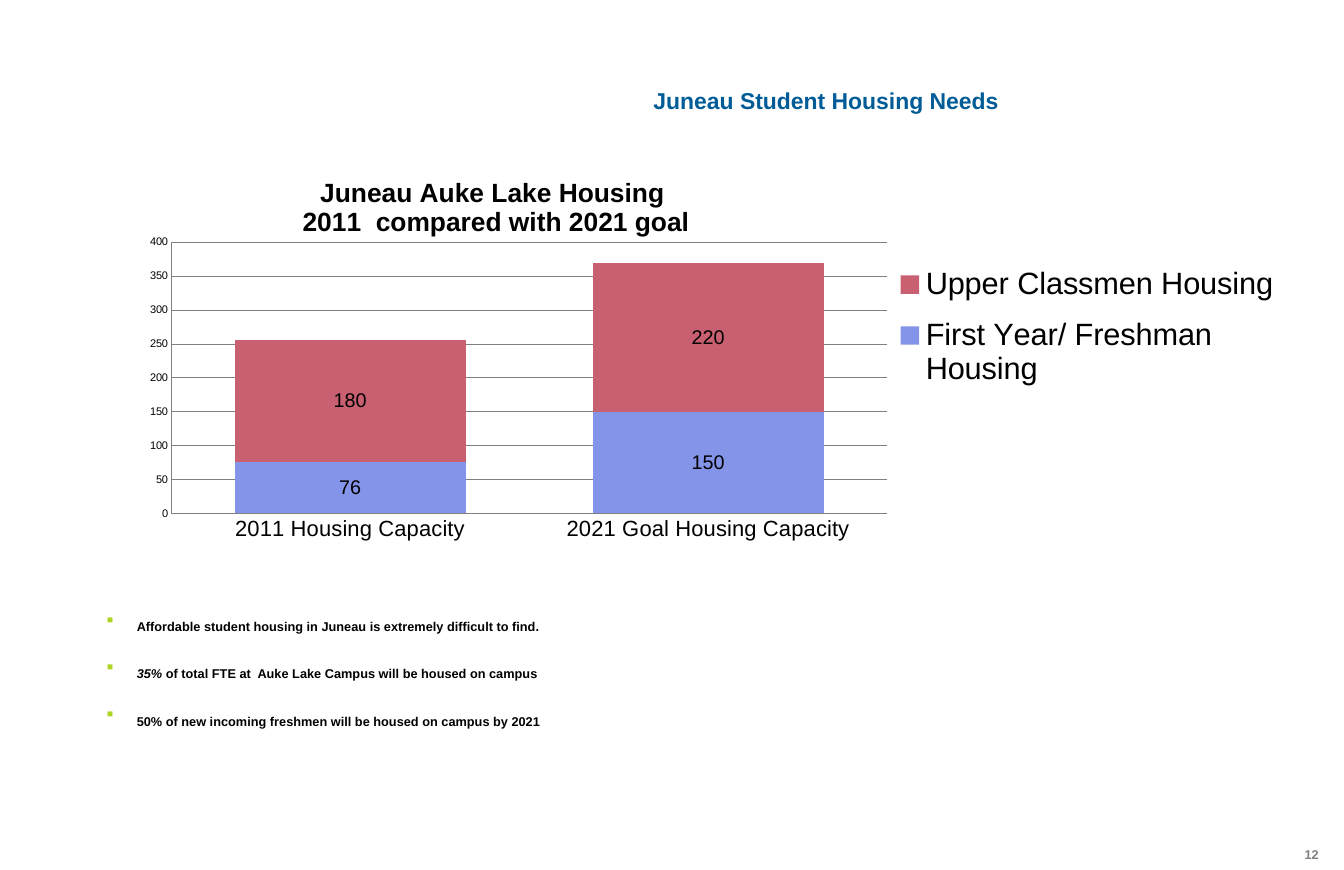
from pptx import Presentation
from pptx import util as u
from pptx.chart import data as cd
from pptx.dml.color import RGBColor
from pptx.enum import chart as ce, text as te
from pptx.oxml import parse_xml
from pptx.oxml.ns import nsdecls, qn

NAVY = RGBColor(0x00, 0x5C, 0x97)
BLACK = RGBColor(0, 0, 0)
GRAY = RGBColor(0x80, 0x80, 0x80)
BLUE = RGBColor(0x83, 0x94, 0xE9)
ROSE = RGBColor(0xC8, 0x60, 0x71)
LIME = RGBColor(0xAD, 0xD4, 0x25)
FONT = "Arial"

CATS = ["2011 Housing Capacity", "2021 Goal Housing Capacity"]
SERIES = [
    ("First Year/ Freshman Housing", (76, 150), BLUE),
    ("Upper Classmen Housing", (180, 220), ROSE),
]
POINTS = [
    [("Affordable student housing in Juneau is extremely difficult to find.", False)],
    [("35% ", True),
     ("of total FTE at  Auke Lake Campus will be housed on campus", False)],
    [("50% of new incoming freshmen will be housed on campus by 2021", False)],
]


def style(font, size, color=BLACK, bold=False, italic=False):
    font.name, font.size = FONT, u.Pt(size)
    font.bold, font.italic = bold, italic
    font.color.rgb = color


def write(para, words, sub=True, align=None, **fmt):
    """Add one run; sub sets it as lowered small text."""
    run = para.add_run()
    run.text = words
    style(run.font, **fmt)
    if sub:
        run._r.get_or_add_rPr().set("baseline", "-25000")
    if align is not None:
        para.alignment = align


def fit(shape, box):
    """Move a text shape to its box and return its emptied frame."""
    shape.left, shape.top, shape.width, shape.height = box
    frame = shape.text_frame
    frame.word_wrap = True
    frame.auto_size = te.MSO_AUTO_SIZE.NONE
    frame.vertical_anchor = te.MSO_ANCHOR.TOP
    return frame


def bullet(para):
    props = para._p.get_or_add_pPr()
    props.set("lvl", "1")
    props.set("marL", str(u.Cm(1.57)))
    props.set("indent", str(u.Cm(-0.97)))
    stops = "".join(f'<a:tab pos="{u.Cm(x)}" algn="l"/>' for x in (1.57, 2.06, 2.54))
    for xml in (
        f'<a:buClr {nsdecls("a")}><a:srgbClr val="{LIME}"/></a:buClr>',
        f'<a:buSzPct {nsdecls("a")} val="90000"/>',
        f'<a:buFont {nsdecls("a")} typeface="{FONT}"/>',
        f'<a:buChar {nsdecls("a")} char="▪"/>',
        f'<a:tabLst {nsdecls("a")}>{stops}</a:tabLst>',
    ):
        props.append(parse_xml(xml))


def place(part, x, y, w=None, h=None, inner=False):
    """Give a chart part a manual layout in shares of the chart."""
    old = part.find(qn("c:layout"))
    if old is not None:
        part.remove(old)
    tags = '<c:layoutTarget val="inner"/>' if inner else ""
    tags += '<c:xMode val="edge"/><c:yMode val="edge"/>'
    for key, val in zip("xywh", (x, y, w, h)):
        if val is not None:
            tags += f'<c:{key} val="{val}"/>'
    new = parse_xml(f'<c:layout {nsdecls("c")}><c:manualLayout>{tags}'
                    '</c:manualLayout></c:layout>')
    over = part.find(qn("c:overlay"))
    if over is None:
        part.insert(0, new)
    else:
        over.addprevious(new)


def add_title(slide, box):
    frame = fit(slide.shapes.title, box)
    write(frame.paragraphs[0], "Juneau Student Housing Needs", size=36,
          color=NAVY, bold=True, align=te.PP_ALIGN.RIGHT)


def add_points(slide, box):
    frame = fit(slide.placeholders[1], box)
    for i, parts in enumerate(POINTS):
        para = frame.add_paragraph() if i else frame.paragraphs[0]
        bullet(para)
        para.line_spacing = 1.5
        para.space_before = u.Pt(1 if i else 0)
        para.space_after = u.Pt(1)
        for words, slant in parts:
            write(para, words, size=20, bold=True, italic=slant)


def add_number(slide, box):
    frame = fit(slide.shapes.add_textbox(*box), box)
    write(frame.paragraphs[0], "12", size=20, color=GRAY, bold=True,
          align=te.PP_ALIGN.RIGHT)


def add_bars(slide, box):
    data = cd.CategoryChartData()
    data.categories = CATS
    for name, vals, _ in SERIES:
        data.add_series(name, vals)
    chart = slide.shapes.add_chart(ce.XL_CHART_TYPE.COLUMN_STACKED, *box, data).chart
    style(chart.font, 10)

    # Chart title
    frame = chart.chart_title.text_frame
    write(frame.paragraphs[0], "Juneau Auke Lake Housing ", sub=False, size=24, bold=True)
    write(frame.add_paragraph(), "2011  compared with 2021 goal", sub=False,
          size=24, bold=True)
    place(chart.chart_title._element, 0.16, 0.02)

    # Bars and their labels
    plot = chart.plots[0]
    plot.gap_width, plot.overlap = 55, 100
    plot.vary_by_categories = False
    for bar, (_, _, color) in zip(plot.series, SERIES):
        bar.format.fill.solid()
        bar.format.fill.fore_color.rgb = color
        bar.format.line.fill.background()
        bar.data_labels.show_value = True
        bar.data_labels.position = ce.XL_LABEL_POSITION.CENTER
        style(bar.data_labels.font, 18)
    place(chart._chartSpace.chart.plotArea, 0.05, 0.18, 0.61, 0.64, inner=True)

    # Axes
    cat, val = chart.category_axis, chart.value_axis
    val.minimum_scale, val.maximum_scale, val.major_unit = 0, 400, 50
    val.has_major_gridlines = True
    for axis, size in ((cat, 20), (val, 10)):
        axis.major_tick_mark = axis.minor_tick_mark = ce.XL_TICK_MARK.NONE
        style(axis.tick_labels.font, size)
    for item in (cat, val, val.major_gridlines):
        item.format.line.color.rgb = GRAY
        item.format.line.width = u.Pt(0.75)

    # Legend
    chart.has_legend = True
    key = chart.legend
    key.position = ce.XL_LEGEND_POSITION.RIGHT
    key.include_in_layout = False
    style(key.font, 28)
    place(key._element, 0.66, 0.2, 0.34, 0.36)


def area(*sides):
    return [u.Cm(s) for s in sides]


def main():
    deck = Presentation()
    deck.slide_width, deck.slide_height = u.Cm(43.18), u.Cm(27.94)
    slide = deck.slides.add_slide(deck.slide_layouts[1])
    add_number(slide, area(41.2, 26.59, 1.42, 0.84))
    add_title(slide, area(10.34, 1.8, 22, 1.8))
    add_points(slide, area(2.57, 18.8, 27.18, 5.23))
    add_bars(slide, area(3.61, 5.33, 37.72, 13.61))
    deck.save("out.pptx")


if __name__ == "__main__":
    main()
